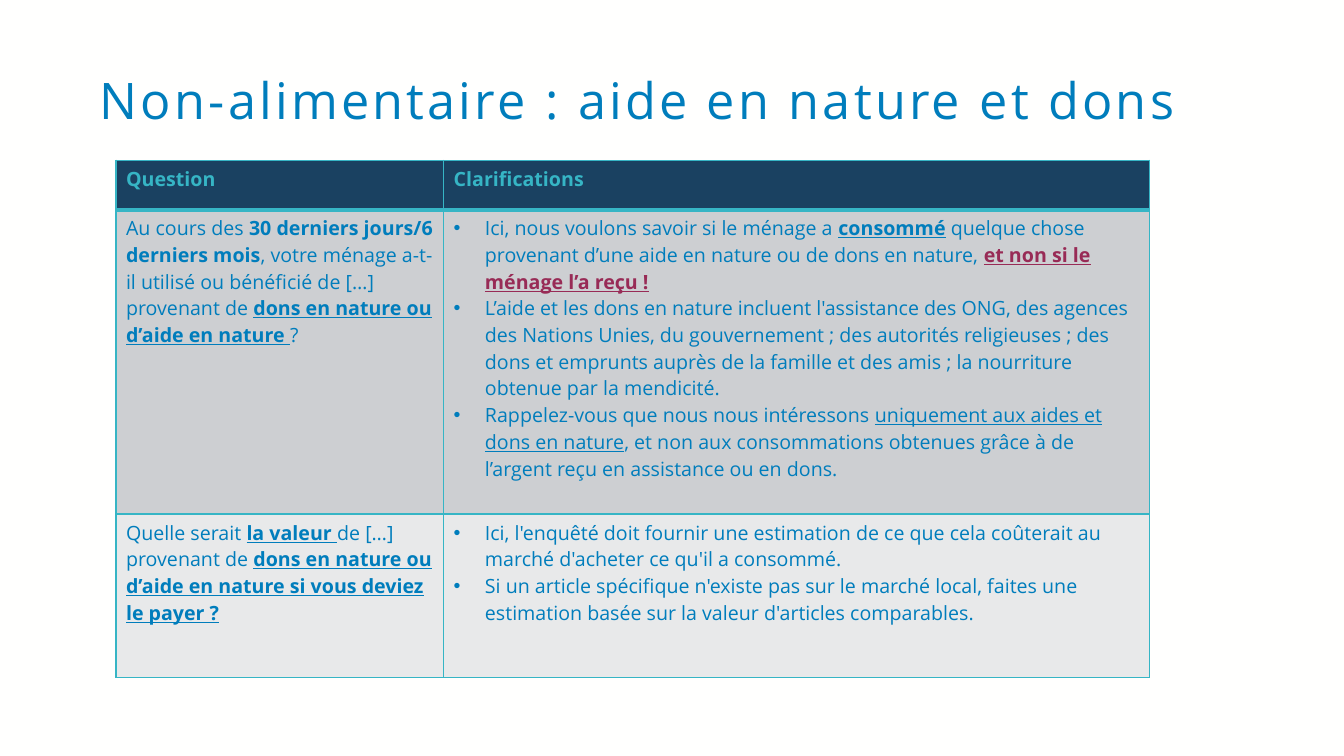
from lxml.etree import SubElement
from pptx import Presentation
from pptx.dml.color import RGBColor
from pptx.enum.text import MSO_ANCHOR
from pptx.oxml import parse_xml
from pptx.oxml.ns import nsdecls, qn
from pptx.util import Inches, Pt

BACKGROUND = RGBColor(0xFF, 0xFF, 0xFE)
BLUE = RGBColor(0x00, 0x7D, 0xBC)
TEAL = RGBColor(0x36, 0xB5, 0xC5)
NAVY = RGBColor(0x1A, 0x41, 0x61)
RED = RGBColor(0x98, 0x2B, 0x56)
DARK_GREY = RGBColor(0xCD, 0xCF, 0xD2)
LIGHT_GREY = RGBColor(0xE8, 0xE9, 0xEA)
FONT = "Open Sans"

PLAIN = (False, False, BLUE)
BOLD = (True, False, BLUE)
UNDERLINED = (False, True, BLUE)
STRONG = (True, True, BLUE)
WARNING = (True, True, RED)
HEADING = (True, False, TEAL)

COLUMNS = (3.25, 7)
ROWS = (0.49, 3.02, 1.62)
ROW_FILLS = (NAVY, DARK_GREY, LIGHT_GREY)
BULLET_INDENT = Inches(0.31)

TITLE = "Non-alimentaire : aide en nature et dons"
HEADINGS = ("Question", "Clarifications")
QUESTIONS = (
    [
        ("Au cours des ", PLAIN),
        ("30 derniers jours/6 derniers mois", BOLD),
        (", votre ménage a-t-il utilisé ou bénéficié de […] provenant de ", PLAIN),
        ("dons en nature ou d’aide en nature ", STRONG),
        ("?", PLAIN),
    ],
    [
        ("Quelle serait ", PLAIN),
        ("la valeur ", STRONG),
        ("de […] provenant de ", PLAIN),
        ("dons en nature ou d’aide en nature si vous deviez le payer ?", STRONG),
    ],
)
CLARIFICATIONS = (
    [
        [
            ("Ici, nous voulons savoir si le ménage a ", PLAIN),
            ("consommé", STRONG),
            (" quelque chose provenant d’une aide en nature ou de dons en nature, ", PLAIN),
            ("et non si le ménage l’a reçu !", WARNING),
        ],
        [
            ("L’aide et les dons en nature incluent l'assistance des ONG, des agences "
             "des Nations Unies, du gouvernement ; des autorités religieuses ; des dons "
             "et emprunts auprès de la famille et des amis ; la nourriture obtenue par "
             "la mendicité.", PLAIN),
        ],
        [
            ("Rappelez-vous que nous nous intéressons ", PLAIN),
            ("uniquement aux aides et dons en nature", UNDERLINED),
            (", et non aux consommations obtenues grâce à de l’argent reçu en "
             "assistance ou en dons.", PLAIN),
        ],
    ],
    [
        [
            ("Ici, l'enquêté doit fournir une estimation de ce que cela coûterait au "
             "marché d'acheter ce qu'il a consommé.", PLAIN),
        ],
        [
            ("Si un article spécifique n'existe pas sur le marché local, faites une "
             "estimation basée sur la valeur d'articles comparables.", PLAIN),
        ],
    ],
)


def add_title(page, left, top, width, height):
    box = page.shapes.add_textbox(Inches(left), Inches(top), Inches(width), Inches(height))
    frame = box.text_frame
    frame.word_wrap = True
    frame.vertical_anchor = MSO_ANCHOR.TOP
    frame.margin_left, frame.margin_top = Inches(0.06), Inches(0.02)
    frame.text = TITLE
    para = frame.paragraphs[0]
    para.line_spacing = 0.9
    span = para.runs[0]
    span.font.name = FONT
    span.font.size = Pt(36)
    span.font.color.rgb = BLUE
    span.font._element.set("spc", "230")


def add_bullet(para):
    properties = para._p.get_or_add_pPr()
    properties.set("marL", str(BULLET_INDENT))
    properties.set("indent", str(-BULLET_INDENT))
    SubElement(properties, qn("a:buFont")).set("typeface", "Arial")
    SubElement(properties, qn("a:buChar")).set("char", "•")


def write_spans(para, spans):
    for text, (bold, underline, color) in spans:
        span = para.add_run()
        span.text = text
        font = span.font
        font.name = FONT
        font.size = Pt(14)
        font.bold = bold
        font.underline = underline
        font.color.rgb = color


def style_cell(cell, fill, top_width, bottom_width):
    cell.fill.solid()
    cell.fill.fore_color.rgb = fill
    properties = cell._tc.get_or_add_tcPr()
    edges = (("lnL", 1), ("lnR", 1), ("lnT", top_width), ("lnB", bottom_width))
    for position, (edge, width) in enumerate(edges):
        properties.insert(position, parse_xml(
            f'<a:{edge} {nsdecls("a")} w="{Pt(width)}"><a:solidFill>'
            f'<a:srgbClr val="{TEAL}"/></a:solidFill></a:{edge}>'))


def fill_cell(cell, paragraphs, bulleted):
    frame = cell.text_frame
    for index, spans in enumerate(paragraphs):
        para = frame.add_paragraph() if index else frame.paragraphs[0]
        if bulleted:
            add_bullet(para)
        write_spans(para, spans)


def add_question_table(page, left, top):
    table = page.shapes.add_table(
        len(ROWS), len(COLUMNS), Inches(left), Inches(top),
        Inches(sum(COLUMNS)), Inches(sum(ROWS))).table
    table.first_row = False
    table.horz_banding = False
    for column, width in zip(table.columns, COLUMNS):
        column.width = Inches(width)
    for row, height in zip(table.rows, ROWS):
        row.height = Inches(height)

    contents = [[[[(heading, HEADING)]] for heading in HEADINGS]]
    contents += [[[question], answers] for question, answers in zip(QUESTIONS, CLARIFICATIONS)]
    for row_index, row_contents in enumerate(contents):
        top_width = 3 if row_index == 1 else 1
        bottom_width = 3 if row_index == 0 else 1
        for column_index, paragraphs in enumerate(row_contents):
            cell = table.cell(row_index, column_index)
            style_cell(cell, ROW_FILLS[row_index], top_width, bottom_width)
            fill_cell(cell, paragraphs, row_index > 0 and column_index == 1)


def main():
    deck = Presentation()
    deck.slide_width, deck.slide_height = Inches(13.33), Inches(7.5)
    page = deck.slides.add_slide(deck.slide_layouts[6])
    page.background.fill.solid()
    page.background.fill.fore_color.rgb = BACKGROUND
    add_title(page, 0.93, 0.73, 11.53, 1.26)
    add_question_table(page, 1.15, 1.59)
    deck.save("out.pptx")


if __name__ == "__main__":
    main()
